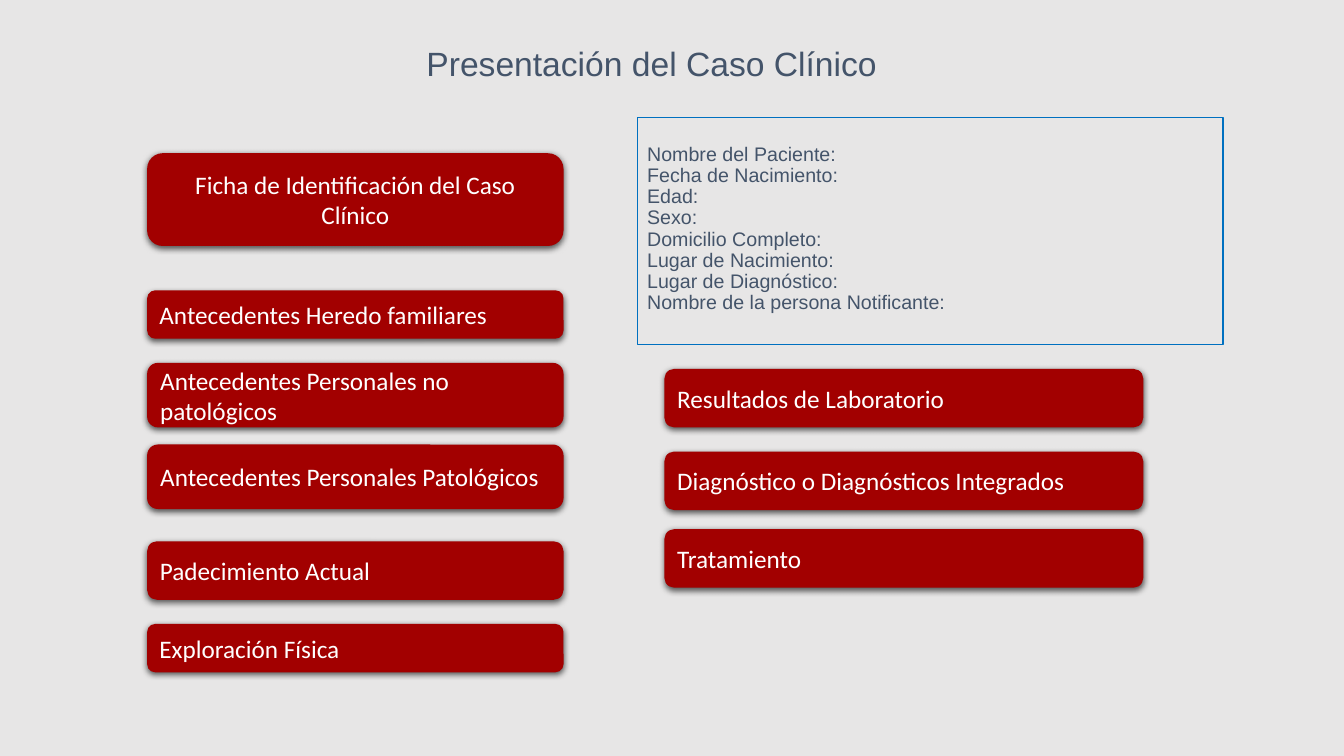
from dataclasses import dataclass

from lxml import etree
from pptx import Presentation, util as u
from pptx.dml.color import RGBColor
from pptx.enum import shapes, text
from pptx.oxml import ns

HUES = {"back": "E7E6E6", "ink": "44546A", "edge": "0070C0",
        "red": "A20000", "white": "FFFFFF", "shade": "000000"}
WIDE, HIGH = u.Inches(13.33), u.Inches(7.5)
LEFT = (10.95, 30.98)
RIGHT = (49.44, 35.63)


@dataclass
class Box:
    x: float
    y: float
    w: float
    h: float

    def place(self) -> tuple[int, ...]:
        return (int(WIDE * self.x / 100), int(HIGH * self.y / 100),
                int(WIDE * self.w / 100), int(HIGH * self.h / 100))


@dataclass
class Topic:
    label: str
    side: tuple[float, float]
    y: float
    h: float
    align: text.PP_ALIGN = text.PP_ALIGN.LEFT


TOPICS = [
    Topic("Ficha de Identificación del Caso Clínico", LEFT, 20.27, 12.27,
          text.PP_ALIGN.CENTER),
    Topic("Antecedentes Heredo familiares", LEFT, 38.4, 6.4),
    Topic("Antecedentes Personales no patológicos", LEFT, 48, 8.53),
    Topic("Antecedentes Personales Patológicos", LEFT, 58.8, 8.53),
    Topic("Padecimiento Actual", LEFT, 71.6, 7.73),
    Topic("Exploración Física", LEFT, 82.53, 6.4),
    Topic("Resultados de Laboratorio", RIGHT, 48.8, 7.73),
    Topic("Diagnóstico o Diagnósticos Integrados", RIGHT, 59.73, 7.73),
    Topic("Tratamiento", RIGHT, 70, 7.73),
]
FIELDS = ["Nombre del Paciente:", "Fecha de Nacimiento:", "Edad:", "Sexo:",
          "Domicilio Completo:", "Lugar de Nacimiento:",
          "Lugar de Diagnóstico:", "Nombre de la persona Notificante:"]


def hue(name: str) -> RGBColor:
    return RGBColor.from_string(HUES[name])


def write(para, words: str, size: int, face: str, tint: str,
          align=text.PP_ALIGN.LEFT) -> None:
    para.alignment = align
    run = para.add_run()
    run.text = words
    run.font.size = u.Pt(size)
    run.font.name = face
    run.font.color.rgb = hue(tint)


def shade(shape) -> None:
    glow = shape._element.spPr.find(ns.qn("a:effectLst"))
    drop = etree.SubElement(glow, ns.qn("a:outerShdw"), blurRad=str(u.Pt(4.5)),
                            dist=str(u.Pt(1.5)), dir="5400000", algn="ctr",
                            rotWithShape="0")
    tone = etree.SubElement(drop, ns.qn("a:srgbClr"), val=HUES["shade"])
    etree.SubElement(tone, ns.qn("a:alpha"), val="63000")


def draw_title(slide) -> None:
    title = slide.shapes.title
    title.left, title.top, title.width, title.height = Box(
        30.98, 3.33, 36.53, 10).place()
    frame = title.text_frame
    frame.auto_size = text.MSO_AUTO_SIZE.NONE
    frame.vertical_anchor = text.MSO_ANCHOR.MIDDLE
    write(frame.paragraphs[0], "Presentación del Caso Clínico", 24, "Arial", "ink")


def draw_panel(slide) -> None:
    panel = slide.shapes.add_shape(shapes.MSO_SHAPE.RECTANGLE,
                                   *Box(47.41, 15.6, 43.59, 30).place())
    panel.shadow.inherit = False
    panel.fill.background()
    panel.line.color.rgb = hue("edge")
    panel.line.width = u.Pt(0.75)
    frame = panel.text_frame
    frame.word_wrap = True
    frame.vertical_anchor = text.MSO_ANCHOR.TOP
    frame.margin_top = int(HIGH * 0.035)
    for i, field in enumerate(FIELDS):
        para = frame.add_paragraph() if i else frame.paragraphs[0]
        para.line_spacing = 0.9
        write(para, field, 14, "Arial", "ink")


def draw_topic(slide, topic: Topic) -> None:
    x, w = topic.side
    card = slide.shapes.add_shape(shapes.MSO_SHAPE.ROUNDED_RECTANGLE,
                                  *Box(x, topic.y, w, topic.h).place())
    card.shadow.inherit = False
    shade(card)
    card.fill.solid()
    card.fill.fore_color.rgb = hue("red")
    card.line.fill.background()
    frame = card.text_frame
    frame.word_wrap = True
    frame.vertical_anchor = text.MSO_ANCHOR.MIDDLE
    write(frame.paragraphs[0], topic.label, 18, "Calibri", "white", topic.align)


def main() -> None:
    deck = Presentation()
    deck.slide_width, deck.slide_height = WIDE, HIGH
    slide = deck.slides.add_slide(deck.slide_layouts[5])
    slide.background.fill.solid()
    slide.background.fill.fore_color.rgb = hue("back")
    draw_title(slide)
    draw_panel(slide)
    for topic in TOPICS:
        draw_topic(slide, topic)
    deck.save("out.pptx")


if __name__ == "__main__":
    main()
